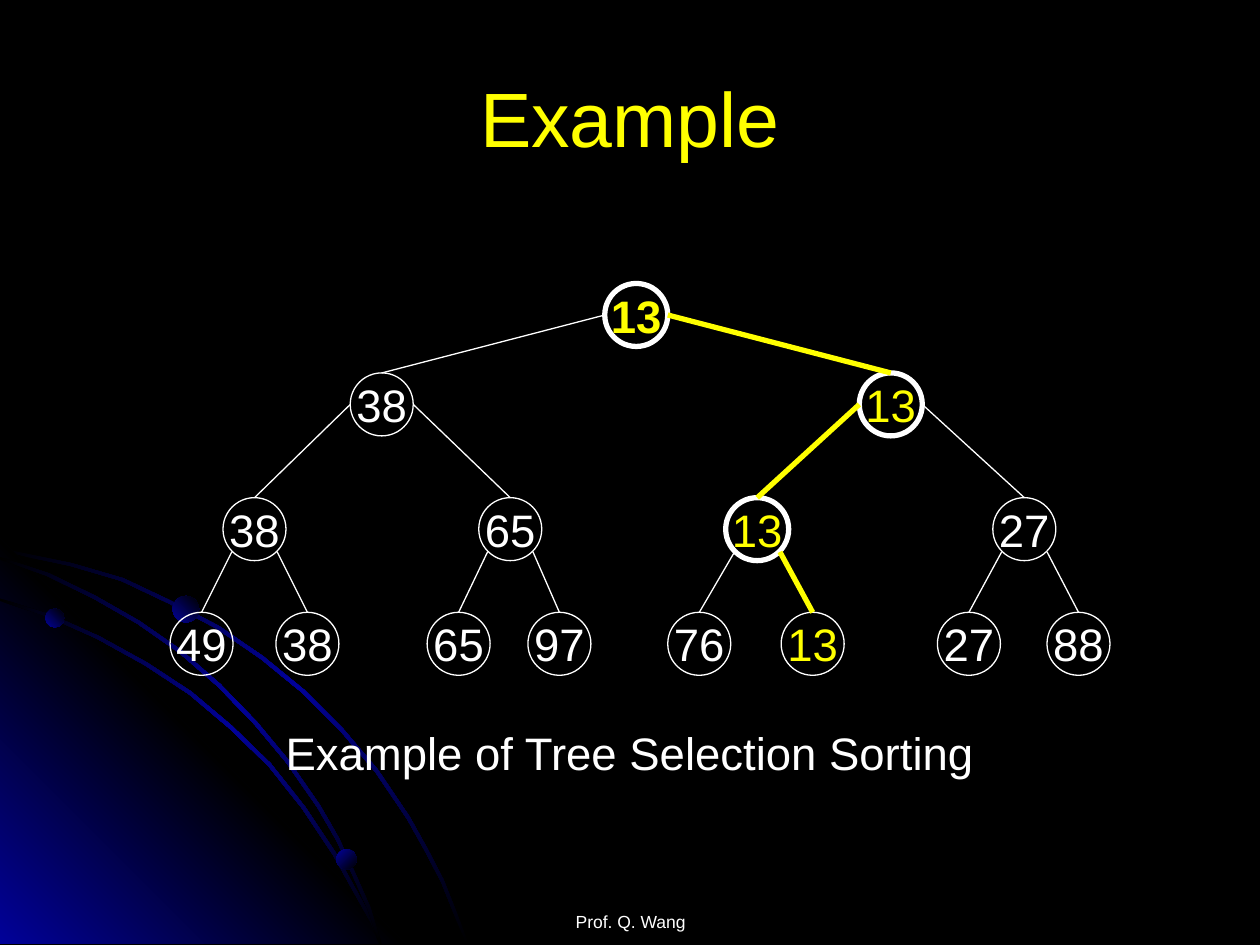
"""Build the tree selection sorting slide."""
from copy import deepcopy
from dataclasses import dataclass

from lxml.etree import SubElement
from pptx import Presentation
from pptx.dml.color import RGBColor
from pptx.enum.shapes import MSO_CONNECTOR, MSO_SHAPE
from pptx.enum.text import MSO_ANCHOR, PP_ALIGN
from pptx.oxml.ns import qn
from pptx.util import Inches, Pt


@dataclass(frozen=True)
class Theme:
    font: str = "Arial"
    black: RGBColor = RGBColor(0, 0, 0)
    blue: RGBColor = RGBColor(0x01, 0x01, 0x99)
    white: RGBColor = RGBColor(0xFF, 0xFF, 0xFF)
    yellow: RGBColor = RGBColor(0xFF, 0xFF, 0)
    title: int = 44
    body: int = 26
    footer: int = 10
    thin: float = 0.75
    thick: float = 3


class TreeSlide:
    def __init__(self, slide, theme):
        self.slide, self.theme = slide, theme
        slide.background.fill.solid()
        slide.background.fill.fore_color.rgb = theme.black

    def add_words(self, shape, words, size, color, anchor=MSO_ANCHOR.MIDDLE, wrap=True, bold=False):
        frame = shape.text_frame
        frame.word_wrap, frame.vertical_anchor = wrap, anchor
        paragraph = frame.paragraphs[0]
        paragraph.alignment = PP_ALIGN.CENTER
        run = paragraph.add_run()
        run.text = words
        run.font.name, run.font.size, run.font.bold = self.theme.font, Pt(size), bold
        run.font.color.rgb = color

    def label(self, box, words, size, color, **options):
        shape = self.slide.shapes.add_textbox(*map(Inches, box))
        self.add_words(shape, words, size, color, **options)
        return shape

    def shade(self, shape, colors, angle):
        shape.shadow.inherit = False
        shape.line.fill.background()
        shape.fill.gradient()
        shape.fill.gradient_angle = angle
        stops = shape.element.spPr.find(".//" + qn("a:gsLst"))
        while len(stops) < len(colors):
            stops.append(deepcopy(stops[-1]))
        for index, (stop, color) in enumerate(zip(shape.fill.gradient_stops, colors)):
            stop.color.rgb = color
            stop.position = index / (len(colors) - 1)

    def outline(self, points, colors, angle):
        start, *rest = [(Inches(x), Inches(y)) for x, y in points]
        builder = self.slide.shapes.build_freeform(*start)
        builder.add_line_segments(rest, close=True)
        self.shade(builder.convert_to_shape(), colors, angle)

    def arc(self, upper):
        lower = [(max(x - 0.02, 0), min(y + 0.02, 7.49)) for x, y in reversed(upper)]
        black, blue = self.theme.black, self.theme.blue
        self.outline(upper + lower, (black, blue, black), 315)

    def ball(self, left, top, size, angle):
        shape = self.slide.shapes.add_shape(
            MSO_SHAPE.OVAL, *map(Inches, (left, top, size, size)))
        self.shade(shape, (self.theme.blue, self.theme.black), angle)

    def node(self, left, top, words, winner, thick, bold):
        shape = self.slide.shapes.add_shape(
            MSO_SHAPE.OVAL, *map(Inches, (left, top, NODE, NODE)))
        shape.shadow.inherit = False
        shape.fill.background()
        shape.line.color.rgb = self.theme.white
        shape.line.width = Pt(self.theme.thick if thick else self.theme.thin)
        color = self.theme.yellow if winner else self.theme.white
        self.add_words(shape, words, self.theme.body, color, wrap=False, bold=bold)

    def link(self, start, end, winner):
        line = self.slide.shapes.add_connector(
            MSO_CONNECTOR.STRAIGHT, *map(Inches, (*start, *end)))
        line.line.color.rgb = self.theme.yellow if winner else self.theme.white
        line.line.width = Pt(self.theme.thick if winner else self.theme.thin)
        SubElement(line.element.spPr, qn("a:effectLst"))


NODE = 0.5
WINNER = 13
LEVELS = [
    (2.25, [(4.8, 13)]),
    (2.96, [(2.78, 38), (6.82, 13)]),
    (3.95, [(1.77, 38), (3.8, 65), (5.76, 13), (7.88, 27)]),
    (4.86, [(1.35, 49), (2.19, 38), (3.39, 65), (4.19, 97),
            (5.3, 76), (6.2, 13), (7.44, 27), (8.31, 88)]),
]
OUTER_ARC = [
    (0, 4.35), (0.28, 4.41), (0.57, 4.47), (0.98, 4.59), (1.36, 4.77), (1.74, 4.97),
    (2.09, 5.21), (2.42, 5.48), (2.72, 5.78), (3, 6.11), (3.25, 6.48), (3.39, 6.73),
    (3.52, 6.98), (3.62, 7.23), (3.72, 7.49)]
INNER_ARC = [
    (0, 4.75), (0.41, 4.88), (0.79, 5.05), (1.17, 5.26), (1.52, 5.49), (1.84, 5.76),
    (2.15, 6.06), (2.42, 6.4), (2.66, 6.76), (2.86, 7.12), (2.96, 7.3), (3.03, 7.49)]
MIDDLE_ARC = [
    (0, 4.42), (0.39, 4.55), (0.76, 4.73), (1.11, 4.93), (1.44, 5.16), (1.75, 5.43),
    (2.04, 5.73), (2.29, 6.03), (2.54, 6.39), (2.69, 6.65), (2.82, 6.93), (2.94, 7.2),
    (3.03, 7.49)]
BALLS = [(0.36, 4.83, 0.15, 45), (2.67, 6.74, 0.16, 315), (1.37, 4.73, 0.21, 45)]


def draw_backdrop(page):
    black, blue = page.theme.black, page.theme.blue
    page.arc(OUTER_ARC)
    page.outline([(3.22, 7.49), (0, 7.49), (0, 4.27)], (blue, black, blue), 45)
    page.arc(INNER_ARC)
    page.arc(MIDDLE_ARC)
    for ball in BALLS:
        page.ball(*ball)


def draw_tree(page):
    last = len(LEVELS) - 1
    for depth, (top, nodes) in enumerate(LEVELS):
        for left, value in nodes:
            winner = value == WINNER
            page.node(left, top, str(value), winner, winner and depth < last, depth == 0)
    for depth, ((top, parents), (child_top, children)) in enumerate(zip(LEVELS, LEVELS[1:])):
        inset, drop = (0.07, 0.43) if depth == last - 1 else (0, NODE / 2)
        for index, (child_left, value) in enumerate(children):
            left = parents[index // 2][0]
            start_x = left + NODE - inset if index % 2 else left + inset
            page.link((start_x, top + drop), (child_left + NODE / 2, child_top),
                      value == WINNER)


def main():
    deck = Presentation()
    deck.slide_width, deck.slide_height = Inches(10), Inches(7.5)
    theme = Theme()
    page = TreeSlide(deck.slides.add_slide(deck.slide_layouts[6]), theme)
    draw_backdrop(page)
    footer = page.label((3.42, 6.9, 3.17, 0.5), "Prof. Q. Wang", theme.footer, theme.white,
                        anchor=MSO_ANCHOR.BOTTOM)
    footer.text_frame.margin_bottom = 0
    draw_tree(page)
    page.label((2.14, 5.7, 5.72, 0.54), "Example of Tree Selection Sorting",
               theme.body, theme.white, wrap=False)
    page.label((0.5, 0.3, 9, 1.25), "Example", theme.title, theme.yellow)
    deck.save("out.pptx")


if __name__ == "__main__":
    main()
